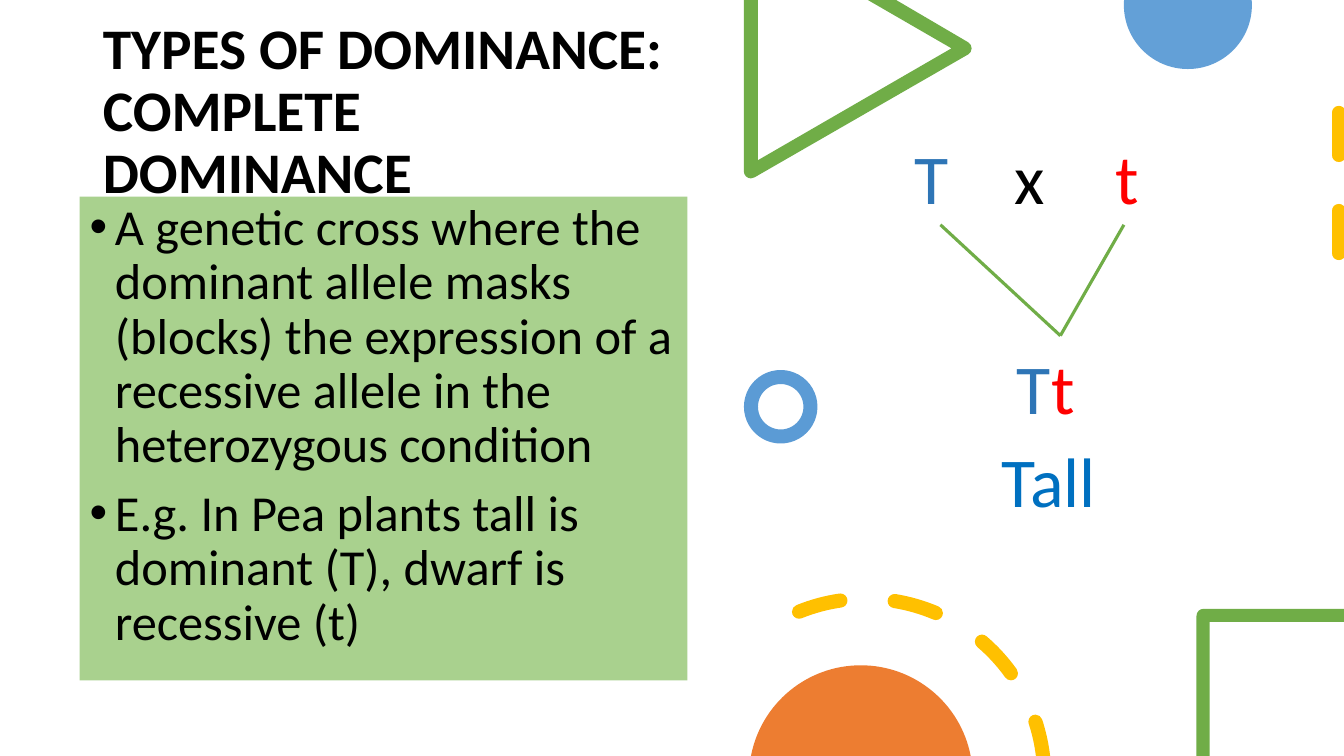
"""Build a slide on complete dominance with a genetic cross and geometric decoration."""
from dataclasses import dataclass
from math import acos, cos, degrees, radians, sin, tan

from lxml.etree import SubElement
from pptx import Presentation
from pptx.dml.color import RGBColor
from pptx.enum.dml import MSO_LINE
from pptx.enum.shapes import MSO_CONNECTOR, MSO_SHAPE
from pptx.enum.text import MSO_ANCHOR, MSO_AUTO_SIZE, PP_ALIGN
from pptx.oxml.ns import qn
from pptx.util import Inches, Pt


@dataclass(frozen=True)
class Theme:
    font: str = "Calibri"
    black: str = "000000"
    blue: str = "5B9BD5"
    green: str = "70AD47"
    panel: str = "A9D18E"
    yellow: str = "FFC000"
    orange: str = "ED7D31"
    dominant: str = "2E75B6"
    recessive: str = "FF0000"
    phenotype: str = "0070C0"
    title_size: float = 41
    body_size: float = 36
    cross_size: float = 50
    thick: float = 10
    thin: float = 2.25


THEME = Theme()
WIDTH, HEIGHT = 40 / 3, 7.5

TITLE = "TYPES OF DOMINANCE: COMPLETE DOMINANCE"
TITLE_BOX = (0.92, 0.4, 5.9, 1.45)
POINTS = [
    "A genetic cross where the dominant allele masks (blocks) the expression of a "
    "recessive allele in the heterozygous condition",
    "E.g. In Pea plants tall is dominant (T), dwarf is recessive (t)",
]
POINTS_BOX = (0.79, 1.95, 6.03, 4.8)
PARENTS = [(0, [("T", THEME.dominant), ("\tx\t", THEME.black), ("t", THEME.recessive)])]
PARENTS_BOX = (8.97, 1.29, 3.44, 1.14)
OFFSPRING = [
    (0.62, [("T", THEME.dominant), ("t", THEME.recessive)]),
    (0.47, [("Tall", THEME.phenotype)]),
]
OFFSPRING_BOX = (9.37, 3.37, 2.34, 2.14)
ALLELE_STARTS = [(9.33, 2.23), (11.15, 2.23)]
ALLELES_MEET = (10.52, 3.33)

RING_BOX = (7.45, 3.74, 0.59, 0.59)
EDGE_DASHES = ((13.28, 1.12), (13.28, 2.87))
CORNER = 0.07
ORBIT_CENTER, ORBIT_RADIUS = (8.59, 7.71), 1.77
DASH_START, DASH_STEP, DASH_SWEEP, DASH_COUNT = -22, 31.3, 13.8, 4


def color(code):
    return RGBColor.from_string(code)


def inches(values):
    return [Inches(value) for value in values]


def corners(*points):
    return [[point] for point in points]


def arc(center, radius, start, end):
    """Return a start point and Bezier curves, in degrees clockwise from the top."""
    def at(angle, reach=0):
        x, y = sin(angle) + reach * cos(angle), -cos(angle) + reach * sin(angle)
        return center[0] + radius * x, center[1] + radius * y

    quarters = [a for a in range(-360, 721, 90) if min(start, end) < a < max(start, end)]
    stops = sorted([start, *quarters, end], reverse=start > end)
    segments = corners(at(radians(start)))
    for a, b in zip(map(radians, stops), map(radians, stops[1:])):
        reach = 4 / 3 * tan((b - a) / 4)
        segments.append([at(a, reach), at(b, -reach), at(b)])
    return segments


def orbit_dash(start):
    """Return the outline of one round-ended dash, cut at the slide's foot."""
    end = start + DASH_SWEEP
    outer, inner = ORBIT_RADIUS + CORNER, ORBIT_RADIUS - CORNER
    foot = [degrees(acos((ORBIT_CENTER[1] - HEIGHT) / r)) for r in (outer, inner)]
    outline = arc(ORBIT_CENTER, outer, start, min(end, foot[0]))
    under = arc(ORBIT_CENTER, inner, min(end, foot[1]), start)
    if end < min(foot):
        head = arc(ORBIT_CENTER, ORBIT_RADIUS, end, end)[0][0]
        outline += arc(head, CORNER, end, end + 180)[1:] + under[1:]
    else:
        outline += under
    tail = arc(ORBIT_CENTER, ORBIT_RADIUS, start, start)[0][0]
    return outline + arc(tail, CORNER, start + 180, start + 360)[1:]


def add_outline(shapes, contours, fill):
    builder = None
    for (start,), *segments in contours:
        if builder:
            builder.move_to(*inches(start))
        else:
            builder = shapes.build_freeform(*inches(start))
        points = [inches(point) for segment in segments for point in segment]
        builder.add_line_segments(points, close=True)
    outline = builder.convert_to_shape()
    track = outline._element.spPr.find(".//" + qn("a:path"))
    nodes = iter(track.findall(qn("a:lnTo")))
    for contour in contours:
        for segment in contour[1:]:
            stops = [next(nodes) for _ in segment]
            if len(stops) == 3:
                curve = SubElement(track, qn("a:cubicBezTo"))
                stops[0].addprevious(curve)
                for stop in stops:
                    curve.append(stop[0])
                    track.remove(stop)
    outline.shadow.inherit = False
    outline.fill.solid()
    outline.fill.fore_color.rgb = color(fill)
    outline.line.fill.background()
    return outline


def add_line(shapes, start, end, stroke, width):
    line = shapes.add_connector(MSO_CONNECTOR.STRAIGHT, *inches(start + end))
    line.line.color.rgb = color(stroke)
    line.line.width = Pt(width)
    SubElement(line._element.spPr, qn("a:effectLst"))
    return line


def style_run(run, size, ink, bold=False):
    run.font.name = THEME.font
    run.font.size = Pt(size)
    run.font.bold = bold
    run.font.color.rgb = color(ink)


def set_indent(paragraph, left, first=0):
    properties = paragraph._p.get_or_add_pPr()
    properties.set("marL", str(Inches(left)))
    properties.set("indent", str(Inches(first)))
    properties.set("defTabSz", str(Inches(1)))


def place(placeholder, box, anchor):
    placeholder.left, placeholder.top, placeholder.width, placeholder.height = inches(box)
    frame = placeholder.text_frame
    frame.auto_size = MSO_AUTO_SIZE.NONE
    frame.word_wrap = True
    frame.vertical_anchor = anchor
    return frame


def add_title_and_points(slide):
    frame = place(slide.shapes.title, TITLE_BOX, MSO_ANCHOR.MIDDLE)
    frame.text = TITLE
    heading = frame.paragraphs[0]
    heading.alignment = PP_ALIGN.LEFT
    heading.line_spacing = 0.9
    style_run(heading.runs[0], THEME.title_size, THEME.black, bold=True)

    panel = slide.placeholders[1]
    frame = place(panel, POINTS_BOX, MSO_ANCHOR.TOP)
    panel.fill.solid()
    panel.fill.fore_color.rgb = color(THEME.panel)
    frame.text = "\n".join(POINTS)
    for point in frame.paragraphs:
        point.line_spacing = 0.9
        point.space_before = Pt(10)
        set_indent(point, 0.25, -0.25)
        style_run(point.runs[0], THEME.body_size, THEME.black)


def add_decoration(shapes):
    ball = add_outline(shapes, [arc((11.785, 0.05), 0.635, 85.5, 274.5)], THEME.blue)
    tint = ball._element.spPr.find(".//" + qn("a:srgbClr"))
    SubElement(tint, qn("a:alpha"), val="95000")

    ring = shapes.add_shape(MSO_SHAPE.OVAL, *inches(RING_BOX))
    ring.shadow.inherit = False
    ring.fill.background()
    ring.line.color.rgb = color(THEME.blue)
    ring.line.width = Pt(THEME.thick)

    triangle = corners((7.38, 0), (7.52, 0), (7.52, 1.59), (9.44, 0.48), (8.61, 0), (8.89, 0))
    triangle += arc((9.57, 0.48), CORNER, 30, 150) + arc((7.45, 1.7), CORNER, 150, 270)
    add_outline(shapes, [triangle], THEME.green)

    edge = add_line(shapes, *EDGE_DASHES, THEME.yellow, THEME.thick)
    edge.line.dash_style = MSO_LINE.DASH
    edge._element.spPr.find(qn("a:ln")).set("cap", "rnd")

    dashes = [orbit_dash(DASH_START + i * DASH_STEP) for i in range(DASH_COUNT)]
    add_outline(shapes, dashes, THEME.yellow)
    add_outline(shapes, [arc((8.54, 7.71), 1.11, -79, 79)], THEME.orange)

    square = arc((11.94, 6.11), CORNER, 270, 360) + corners(
        (WIDTH, 6.04), (WIDTH, 6.17), (12, 6.17), (12, HEIGHT), (11.87, HEIGHT))
    add_outline(shapes, [square], THEME.green)


def add_alleles(shapes, box, lines):
    frame = shapes.add_textbox(*inches(box)).text_frame
    frame.word_wrap = True
    for i, (indent, parts) in enumerate(lines):
        line = frame.add_paragraph() if i else frame.paragraphs[0]
        line.space_after = Pt(6)
        set_indent(line, indent)
        for wording, ink in parts:
            run = line.add_run()
            run.text = wording
            style_run(run, THEME.cross_size, ink)


def main():
    deck = Presentation()
    deck.slide_width, deck.slide_height = inches((WIDTH, HEIGHT))
    slide = deck.slides.add_slide(deck.slide_layouts[1])
    add_title_and_points(slide)
    add_decoration(slide.shapes)
    cross = slide.shapes.add_group_shape().shapes
    add_alleles(cross, PARENTS_BOX, PARENTS)
    for start in ALLELE_STARTS:
        add_line(cross, start, ALLELES_MEET, THEME.green, THEME.thin)
    add_alleles(cross, OFFSPRING_BOX, OFFSPRING)
    deck.save("out.pptx")


if __name__ == "__main__":
    main()
